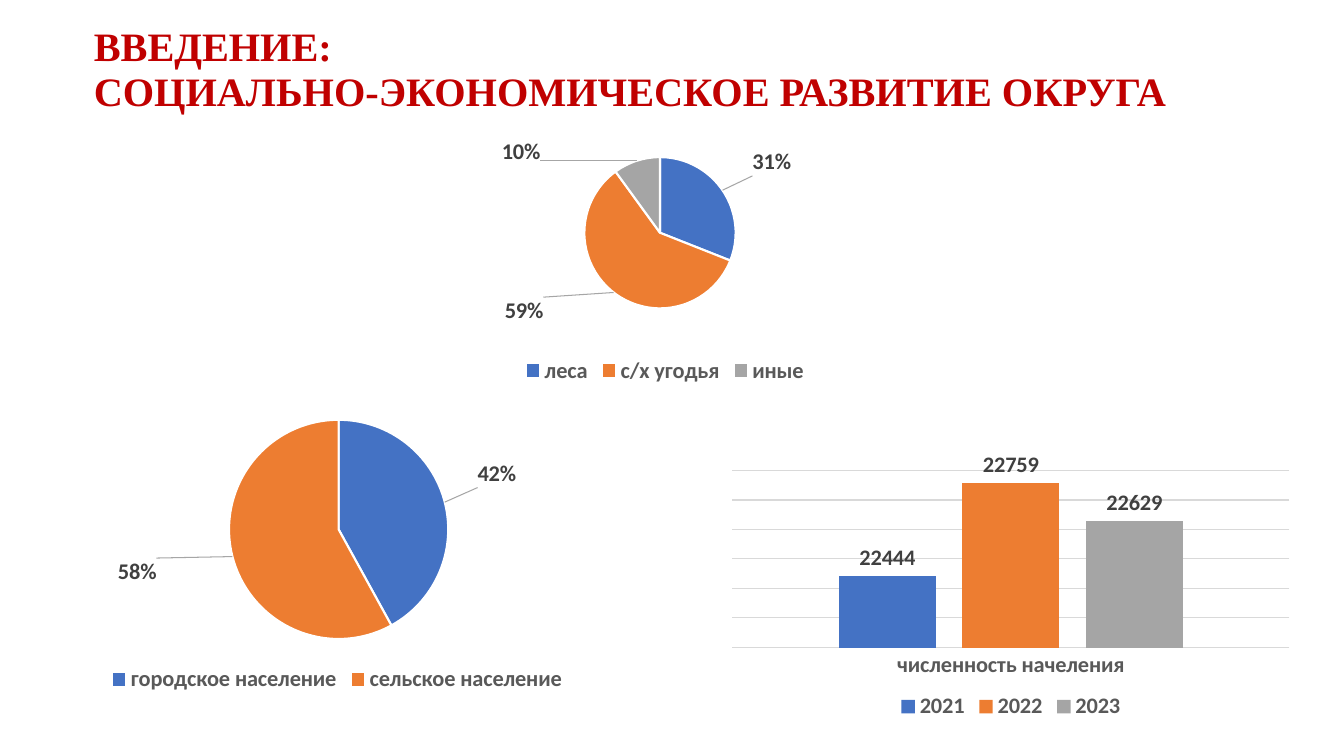
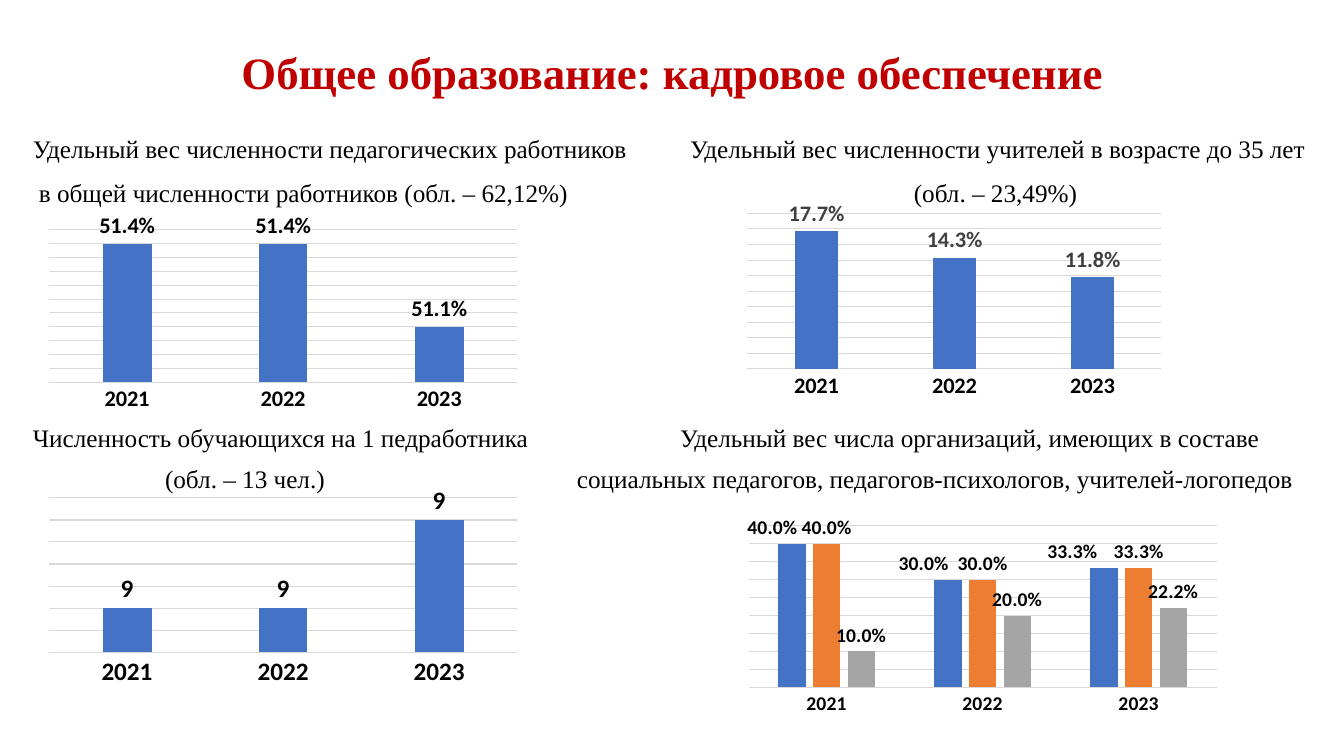
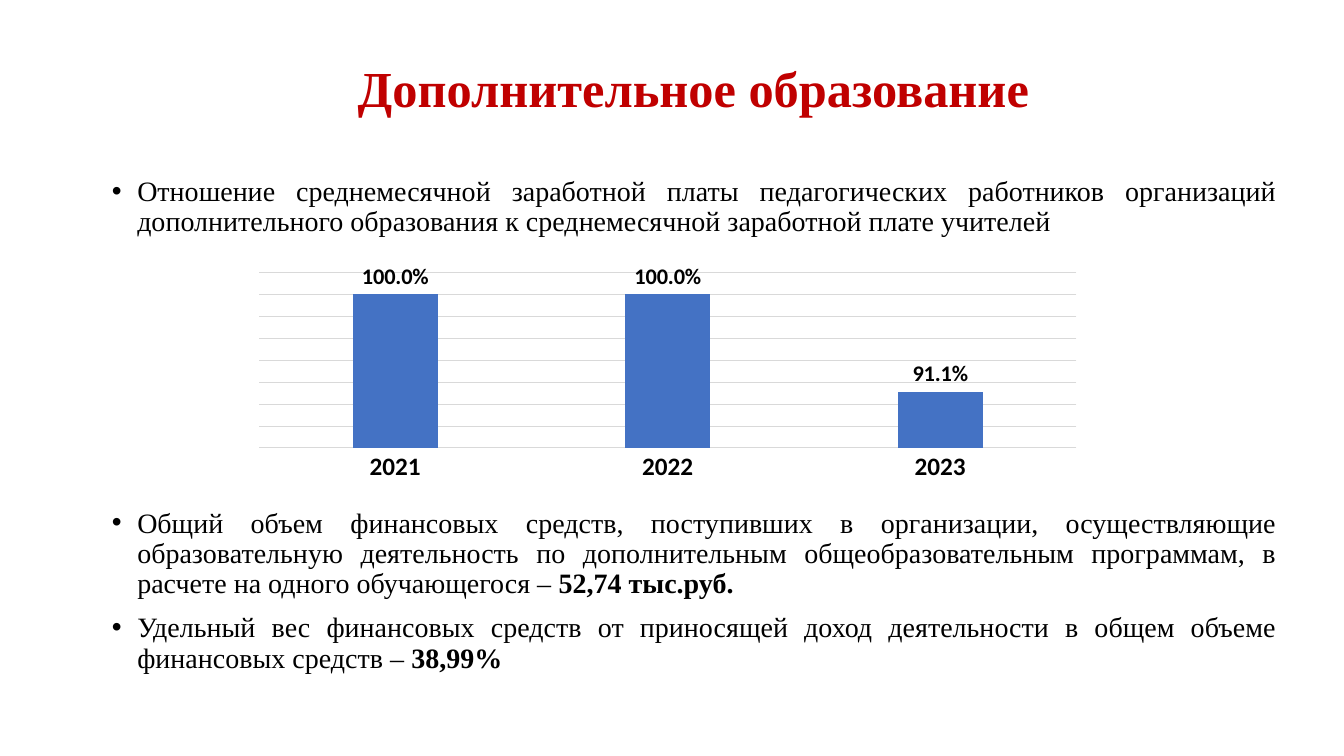
import pptx
import pptx.util
import pptx.chart.data
import pptx.dml.color
import pptx.enum.chart
import pptx.enum.text
import pptx.oxml
import pptx.oxml.ns

Cm, Pt = pptx.util.Cm, pptx.util.Pt
RGB = pptx.dml.color.RGBColor
XL = pptx.enum.chart.XL_CHART_TYPE
ALIGN = pptx.enum.text.PP_ALIGN
ANCHOR = pptx.enum.text.MSO_ANCHOR

# Shared look
RED = RGB(0xC0, 0x00, 0x00)
BLACK = RGB(0x00, 0x00, 0x00)
WHITE = RGB(0xFF, 0xFF, 0xFF)
DARK = RGB(0x40, 0x40, 0x40)
GREY = RGB(0x59, 0x59, 0x59)
GRID = RGB(0xD9, 0xD9, 0xD9)
PALETTE = [RGB(0x44, 0x72, 0xC4), RGB(0xED, 0x7D, 0x31), RGB(0xA5, 0xA5, 0xA5)]
SERIF, SANS = "Times New Roman", "Calibri"
YEARS = ["2021", "2022", "2023"]
TITLE_ONLY = 5


def set_font(font, size, color, bold=True, name=SANS):
    font.name, font.size, font.bold = name, Pt(size), bold
    font.color.rgb = color


def add_text(p, text, size=18, color=BLACK, bold=False, align=ALIGN.LEFT, spacing=0.9, before=0):
    """Add a run to p; a newline in text is a line break."""
    p.alignment, p.line_spacing, p.space_before = align, spacing, Pt(before)
    for i, line in enumerate(text.split("\n")):
        if i:
            p.add_line_break()
        r = p.add_run()
        r.text = line
        set_font(r.font, size, color, bold, SERIF)


def add_slide(prs, title, box, size, align=ALIGN.CENTER, spacing=0.9):
    s = prs.slides.add_slide(prs.slide_layouts[TITLE_ONLY])
    sp = s.shapes.title
    sp.left, sp.top, sp.width, sp.height = map(Cm, box)
    tf = sp.text_frame
    tf.vertical_anchor = ANCHOR.MIDDLE
    add_text(tf.paragraphs[0], title, size=size, color=RED, bold=True, align=align, spacing=spacing)
    return s


def add_frame(s, left, top, width, height):
    tf = s.shapes.add_textbox(Cm(left), Cm(top), Cm(width), Cm(height)).text_frame
    tf.word_wrap = True
    return tf


def paragraph(tf, i):
    return tf.paragraphs[0] if i == 0 else tf.add_paragraph()


def add_caption(s, left, top, width, lines, spacing):
    """Lines are (text, left indent in cm)."""
    tf = add_frame(s, left, top, width, 2.2)
    tf.margin_left = tf.margin_right = tf.margin_top = tf.margin_bottom = 0
    for i, (text, indent) in enumerate(lines):
        p = paragraph(tf, i)
        add_text(p, text, spacing=spacing, before=10 if i else 0)
        p._p.get_or_add_pPr().set("marL", str(Cm(indent)))


def add_bullets(s, top, height, items):
    """Items are (plain text, bold ending)."""
    tf = add_frame(s, 2.57, top, 29.85, height)
    for i, (plain, strong) in enumerate(items):
        p = paragraph(tf, i)
        for text, bold in ((plain, False), (strong, True)):
            if text:
                add_text(p, text, size=20, bold=bold, align=ALIGN.JUSTIFY, before=10 if i else 0)
        pPr = p._p.get_or_add_pPr()
        pPr.set("marL", str(Cm(0.64)))
        pPr.set("indent", str(-Cm(0.64)))
        for tag, key, value in (("buFont", "typeface", "Arial"), ("buChar", "char", "•")):
            pptx.oxml.ns.qn("a:" + tag)
            pPr.append(xml("a", tag, f'{key}="{value}"'))


# Chart parts
def xml(prefix, tag, attrs="", inner=""):
    return pptx.oxml.parse_xml(
        f'<{prefix}:{tag} {pptx.oxml.ns.nsdecls("a", "c")} {attrs}>{inner}</{prefix}:{tag}>')


def manual_layout(inner=False, **values):
    parts = '<c:layoutTarget val="inner"/>' if inner else ""
    if inner:
        parts += '<c:xMode val="edge"/><c:yMode val="edge"/>'
    parts += "".join(f'<c:{k} val="{v}"/>' for k, v in values.items())
    return xml("c", "layout", inner=f"<c:manualLayout>{parts}</c:manualLayout>")


def add_chart(s, kind, box, cats, series, plot_box, fmt):
    data = pptx.chart.data.CategoryChartData(number_format=fmt)
    data.categories = cats
    for name, values in series:
        data.add_series(name, values)
    chart = s.shapes.add_chart(kind, *map(Cm, box), data).chart
    chart.has_title = chart.has_legend = False
    set_font(chart.font, 10, BLACK, False)
    area = chart._chartSpace.xpath("c:chart/c:plotArea")[0]
    for old in area.xpath("c:layout"):
        area.remove(old)
    area.insert(0, manual_layout(True, **dict(zip("xywh", plot_box))))
    return chart


def add_legend(chart):
    chart.has_legend = True
    chart.legend.position = pptx.enum.chart.XL_LEGEND_POSITION.BOTTOM
    chart.legend.include_in_layout = False
    set_font(chart.legend.font, 16, GREY)


def add_labels(ser, size, color, fmt, nudges=(), leaders=False):
    """Show values; nudges move single labels by parts of the chart's size."""
    end = pptx.enum.chart.XL_LABEL_POSITION.OUTSIDE_END
    labels = ser.data_labels
    labels.show_value, labels.position = True, end
    labels.number_format, labels.number_format_is_linked = fmt, False
    set_font(labels.font, size, color)
    for i, (dx, dy) in enumerate(nudges):
        label = ser.points[i].data_label
        set_font(label.font, size, color)
        label.position = end
        ser._element.xpath("c:dLbls/c:dLbl")[i].insert(1, manual_layout(x=dx, y=dy))
    group = labels._element
    for old in group.xpath("c:showLeaderLines"):
        group.remove(old)
    group.append(xml("c", "showLeaderLines", f'val="{int(leaders)}"'))
    if leaders:
        line = '<a:ln w="9525"><a:solidFill><a:srgbClr val="A6A6A6"/></a:solidFill></a:ln>'
        group.append(xml("c", "leaderLines", inner=f"<c:spPr>{line}</c:spPr>"))


def fill(fmt, color):
    fmt.fill.solid()
    fmt.fill.fore_color.rgb = color


def add_pie(s, box, cats, values, plot_box, nudges):
    chart = add_chart(s, XL.PIE, box, cats, [("Series 1", values)], plot_box, "0%")
    chart.plots[0].vary_by_categories = True
    ser = chart.plots[0].series[0]
    for i in range(len(values)):
        fmt = ser.points[i].format
        fill(fmt, PALETTE[i])
        fmt.line.color.rgb, fmt.line.width = WHITE, Pt(1.5)
    add_labels(ser, 16, DARK, "0%", nudges, leaders=True)
    add_legend(chart)


def add_columns(s, box, cats, series, scale, plot_y, fmt="0.0%", size=16,
                axis_size=None, axis_color=BLACK, label_color=BLACK, nudges=()):
    """scale is (min, max, step); plot_y is (top, height) as parts of the chart."""
    chart = add_chart(s, XL.COLUMN_CLUSTERED, box, cats, series,
                      (0.02, plot_y[0], 0.96, plot_y[1]), fmt)
    plot = chart.plots[0]
    plot.gap_width, plot.overlap, plot.vary_by_categories = 219, -27, False
    for i, ser in enumerate(plot.series):
        fill(ser.format, PALETTE[i])
        ser.invert_if_negative = False
        add_labels(ser, size, label_color, fmt, nudges if i == 0 else ())
    ax = chart.value_axis
    ax.minimum_scale, ax.maximum_scale, ax.major_unit = scale
    ax.has_major_gridlines, ax.visible = True, False
    cat = chart.category_axis
    cat.major_tick_mark = pptx.enum.chart.XL_TICK_MARK.NONE
    set_font(cat.tick_labels.font, axis_size or size, axis_color)
    for line in (ax.major_gridlines.format.line, cat.format.line):
        line.color.rgb, line.width = GRID, Pt(0.75)
    return chart


# Slides
def intro_slide(prs):
    s = add_slide(prs, "ВВЕДЕНИЕ:\nСОЦИАЛЬНО-ЭКОНОМИЧЕСКОЕ РАЗВИТИЕ ОКРУГА",
                  (2.11, 0.79, 30.5, 1.96), 28.8, ALIGN.LEFT, 0.95)
    add_pie(s, (9.75, 2.84, 14.02, 6.96), ["леса", "с/х угодья", "иные"], [0.31, 0.59, 0.1],
            (0.355, 0.16, 0.272, 0.55), [(0.045, -0.04), (-0.12, 0), (-0.17, 0.04)])
    add_pie(s, (1.68, 10.21, 13.64, 7.37), ["городское население", "сельское население"],
            [0.42, 0.58], (0.3, 0.05, 0.405, 0.75), [(0.05, -0.045), (-0.13, 0)])
    chart = add_columns(s, (18.16, 11.38, 14.63, 6.88), ["численность начеления"],
                        list(zip(YEARS, [[22444], [22759], [22629]])), (22200, 22800, 100),
                        (0.06, 0.655), "0", axis_color=GREY, label_color=DARK)
    add_legend(chart)


def staff_slide(prs):
    s = add_slide(prs, "Общее образование: кадровое обеспечение", (2.34, 0.81, 29.21, 2.16), 32)
    upper, lower = 3.36, 10.72
    add_caption(s, 0.83, upper, 15.8, [
        ("Удельный вес численности педагогических работников", 0),
        ("в общей численности работников (обл. – 62,12%)", 0.15)], 1.0)
    add_caption(s, 17.39, upper, 16.3, [
        ("Удельный вес численности учителей в возрасте до 35 лет", 0),
        ("(обл. – 23,49%)", 5.64)], 1.0)
    add_caption(s, 0.83, lower, 13.5, [
        ("Численность обучающихся на 1 педработника", 0),
        ("(обл. – 13 чел.)", 3.33)], 0.9)
    add_caption(s, 14.54, lower, 18.8, [
        ("Удельный вес числа организаций, имеющих в составе", 2.6),
        ("социальных педагогов, педагогов-психологов, учителей-логопедов", 0)], 0.9)

    left, right, width, height = 0.99, 18.62, 12.29, 5.11
    add_columns(s, (left, 5.36, width, height), YEARS, [("Series 1", [0.514, 0.514, 0.511])],
                (0.509, 0.5145, 0.0005), (0.08, 0.755))
    add_columns(s, (right, 5.05, 10.87, height), YEARS, [("Series 1", [0.177, 0.143, 0.118])],
                (0, 0.2, 0.02), (0.055, 0.775), label_color=DARK)
    add_columns(s, (left, 12.24, width, height), YEARS, [("Series 1", [9, 9, 9.4])],
                (8.8, 9.5, 0.1), (0.055, 0.765), "0", size=18)
    add_columns(s, (right, 13, width, height), YEARS,
                [("Series 1", [0.4, 0.3, 0.333]), ("Series 2", [0.4, 0.3, 0.333]),
                 ("Series 3", [0.1, 0.2, 0.222])],
                (0, 0.45, 0.05), (0.045, 0.8), size=14,
                nudges=[(-0.04, 0), (-0.05, 0), (-0.065, 0)])


def extra_slide(prs):
    s = add_slide(prs, "Дополнительное образование", (2.87, 1.12, 29.21, 2.34), 36)
    add_bullets(s, 4.34, 2, [
        ("Отношение среднемесячной заработной платы педагогических работников организаций "
         "дополнительного образования к среднемесячной заработной плате учителей", "")])
    add_bullets(s, 12.7, 4.6, [
        ("Общий объем финансовых средств, поступивших в организации, осуществляющие "
         "образовательную деятельность по дополнительным общеобразовательным программам, "
         "в расчете на одного обучающегося – ", "52,74 тыс.руб."),
        ("Удельный вес финансовых средств от приносящей доход деятельности в общем объеме "
         "финансовых средств – ", "38,99%")])
    add_columns(s, (6.1, 6.63, 21.46, 5.61), YEARS, [("Series 1", [1, 1, 0.911])],
                (0.86, 1.02, 0.02), (0.035, 0.795), axis_size=18)


def main():
    prs = pptx.Presentation()
    prs.slide_width, prs.slide_height = Cm(33.87), Cm(19.05)
    intro_slide(prs)
    staff_slide(prs)
    extra_slide(prs)
    prs.save("out.pptx")


if __name__ == "__main__":
    main()
